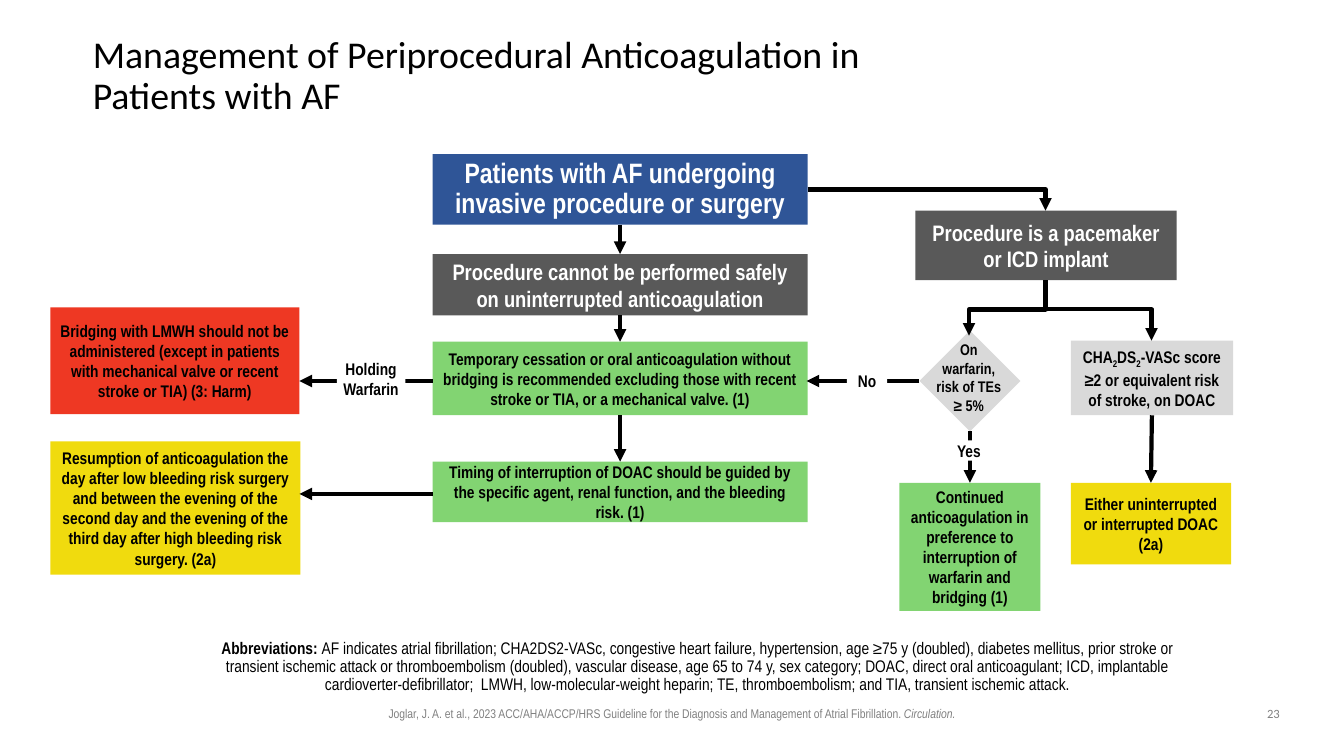
from dataclasses import dataclass

from lxml import etree
from pptx import Presentation
from pptx.dml.color import RGBColor
from pptx.enum import shapes, text
from pptx.oxml import ns
from pptx.util import Inches, Pt


@dataclass(frozen=True)
class Theme:
    black: str = "000000"
    white: str = "FFFFFF"
    blue: str = "2F5597"
    charcoal: str = "595959"
    green: str = "82D472"
    yellow: str = "F0DB0E"
    red: str = "EE3823"
    silver: str = "D9D9D9"
    muted: str = "808080"
    heading_font: str = "Calibri"
    body_font: str = "Arial Narrow"
    title: int = 27
    start: int = 20
    branch: int = 16
    body: int = 12
    diamond: int = 11
    footer: int = 9
    line: int = 3


THEME = Theme()
TITLE = "Management of Periprocedural Anticoagulation in Patients with AF"
ABBREVIATIONS = (
    "Abbreviations: ",
    "AF indicates atrial fibrillation; CHA2DS2-VASc, congestive heart failure, hypertension, "
    "age ≥75 y (doubled), diabetes mellitus, prior stroke or transient ischemic attack or "
    "thromboembolism (doubled), vascular disease, age 65 to 74 y, sex category; DOAC, direct "
    "oral anticoagulant; ICD, implantable cardioverter-defibrillator;  LMWH, low-molecular-weight "
    "heparin; TE, thromboembolism; and TIA, transient ischemic attack.",
)
CITATION = (
    "Joglar, J. A. et al., 2023 ACC/AHA/ACCP/HRS Guideline for the Diagnosis and Management "
    "of Atrial Fibrillation. ",
    "Circulation.",
)
PAGE = "23"

CENTER_LEFT, CENTER_WIDTH = 4.29, 3.72
BOXES = {
    "start": ((CENTER_LEFT, 1.53, CENTER_WIDTH, 0.7), THEME.blue, THEME.white, THEME.start,
              ["Patients with AF undergoing", "invasive procedure or surgery"]),
    "unsafe": ((CENTER_LEFT, 2.52, CENTER_WIDTH, 0.61), THEME.charcoal, THEME.white, THEME.branch,
               ["Procedure cannot be performed safely on uninterrupted anticoagulation"]),
    "implant": ((9.08, 2.09, 2.59, 0.69), THEME.charcoal, THEME.white, THEME.branch,
                ["Procedure is a pacemaker or ICD implant"]),
    "cessation": ((CENTER_LEFT, 3.39, CENTER_WIDTH, 0.73), THEME.green, THEME.black, THEME.body,
                  ["Temporary cessation or oral anticoagulation without bridging is recommended "
                   "excluding those with recent stroke or TIA, or a mechanical valve. (1)"]),
    "timing": ((CENTER_LEFT, 4.58, CENTER_WIDTH, 0.6), THEME.green, THEME.black, THEME.body,
               ["Timing of interruption of DOAC should be guided by the specific agent, "
                "renal function, and the bleeding risk. (1)"]),
    "resumption": ((0.5, 4.38, 2.48, 1.32), THEME.yellow, THEME.black, THEME.body,
                   ["Resumption of anticoagulation the day after low bleeding risk surgery and "
                    "between the evening of the second day and the evening of the third day "
                    "after high bleeding risk surgery. (2a)"]),
    "bridging": ((0.5, 3.05, 2.47, 1.06), THEME.red, THEME.black, THEME.body,
                 ["Bridging with LMWH should not be administered (except in patients with "
                  "mechanical valve or recent stroke or TIA) (3: Harm)"]),
    "continued": ((8.92, 4.79, 1.4, 1.27), THEME.green, THEME.black, THEME.body,
                  ["Continued anticoagulation in preference to interruption of warfarin "
                   "and bridging (1)"]),
    "either": ((10.62, 4.79, 1.59, 0.81), THEME.yellow, THEME.black, THEME.body,
               ["Either uninterrupted or interrupted DOAC (2a)"]),
    "score": ((10.62, 3.38, 1.61, 0.74), THEME.silver, THEME.black, THEME.body,
              ["CHA~2~DS~2~-VASc score", "≥2 or equivalent risk", "of stroke, on DOAC"]),
}
DIAMOND = (9.12, 3.28, 1, 1)
DIAMOND_TEXT = ((9.08, 3.33, 1.06, 0.84), ["On", "warfarin,", "risk of TEs", "≥ 5%"])
DOWN_ARROWS = [("start", "unsafe"), ("unsafe", "cessation"), ("cessation", "timing"),
               ("warfarin", "continued"), ("score", "either")]
LEFT_ARROWS = [((9.12, 3.78), (8, 3.78), "warfarin"), ((4.29, 3.78), (2.97, 3.78), None),
               ((4.29, 4.9), (2.97, 4.9), None)]
FORK, FORK_Y = (10.37, 2.78), 3.07
FORK_ENDS = [(9.61, 3.33), (11.42, 3.38)]
LABELS = [((8.4, 3.63, 0.4, 0.3), 0.05, ["No"]),
          ((3.34, 3.51, 0.68, 0.5), 0.05, ["Holding", "Warfarin"]),
          ((9.41, 4.37, 0.4, 0.2), 0, ["Yes"])]


def style(paragraph, size, color, bold=None, font=THEME.body_font, align=text.PP_ALIGN.CENTER):
    paragraph.alignment = align
    paragraph.font.name = font
    paragraph.font.size = Pt(size)
    paragraph.font.bold = bold
    paragraph.font.color.rgb = RGBColor.from_string(color)


def set_margins(frame, left, top, right, bottom):
    frame.margin_left, frame.margin_top = Inches(left), Inches(top)
    frame.margin_right, frame.margin_bottom = Inches(right), Inches(bottom)


def place(shape, at):
    shape.left, shape.top, shape.width, shape.height = map(Inches, at)


def write(frame, lines, size, color):
    frame.word_wrap = True
    for index, line in enumerate(lines):
        paragraph = frame.paragraphs[0] if index == 0 else frame.add_paragraph()
        for position, part in enumerate(line.split("~")):
            run = paragraph.add_run()
            run.text = part
            if position % 2:
                run.font._element.set("baseline", "-25000")
        style(paragraph, size, color, True)


def add_block(slide, at, fill, preset=shapes.MSO_SHAPE.RECTANGLE):
    shape = slide.shapes.add_shape(preset, *map(Inches, at))
    shape.shadow.inherit = False
    shape.fill.solid()
    shape.fill.fore_color.rgb = RGBColor.from_string(fill)
    shape.line.fill.background()
    shape.text_frame.vertical_anchor = text.MSO_ANCHOR.MIDDLE
    return shape


def add_text_box(slide, at):
    frame = slide.shapes.add_textbox(*map(Inches, at)).text_frame
    frame.word_wrap = True
    return frame


def add_arrow(slide, start, end, kind=shapes.MSO_CONNECTOR.STRAIGHT):
    connector = slide.shapes.add_connector(kind, *map(Inches, start + end))
    connector.line.color.rgb = RGBColor.from_string(THEME.black)
    connector.line.width = Pt(THEME.line)
    etree.SubElement(connector.line._get_or_add_ln(), ns.qn("a:tailEnd"), type="triangle")
    etree.SubElement(connector._element.spPr, ns.qn("a:effectLst"))
    return connector


def add_fork_arrow(slide, start, end, bend_y):
    run, rise = abs(end[0] - start[0]), end[1] - start[1]
    middle_x, middle_y = (start[0] + end[0]) / 2, (start[1] + end[1]) / 2
    corner = (middle_x - rise / 2, middle_y - run / 2)
    connector = add_arrow(slide, corner, (corner[0] + rise, corner[1] + run),
                          shapes.MSO_CONNECTOR.ELBOW)
    transform = connector._element.spPr.find(ns.qn("a:xfrm"))
    to_right = end[0] > start[0]
    transform.set("rot", str((270 if to_right else 90) * 60000))
    if to_right:
        transform.set("flipH", "1")
    adjustments = connector._element.spPr.find(ns.qn("a:prstGeom")).get_or_add_avLst()
    share = round((bend_y - start[1]) / rise * 100000)
    etree.SubElement(adjustments, ns.qn("a:gd"), name="adj1", fmla=f"val {share}")


def add_placeholders(slide):
    title, body = slide.placeholders[0], slide.placeholders[1]
    place(title, (0.92, 0.4, 8.38, 0.72))
    title.text_frame.text = TITLE
    title.text_frame.vertical_anchor = text.MSO_ANCHOR.MIDDLE
    set_margins(title.text_frame, 0, 0, 0, 0)
    paragraph = title.text_frame.paragraphs[0]
    paragraph.line_spacing = 0.9
    style(paragraph, THEME.title, THEME.black, font=THEME.heading_font, align=text.PP_ALIGN.LEFT)

    place(body, (2, 6.3, 9.94, 0.54))
    set_margins(body.text_frame, 0, 0.05, 0.1, 0.05)
    paragraph = body.text_frame.paragraphs[0]
    properties = paragraph._p.get_or_add_pPr()
    properties.set("marL", "0")
    properties.set("indent", "0")
    etree.SubElement(properties, ns.qn("a:buNone"))
    paragraph.line_spacing = 0.9
    paragraph.space_before = Pt(0)
    for part in ABBREVIATIONS:
        paragraph.add_run().text = part
    paragraph.runs[0].font.bold = True
    style(paragraph, THEME.body, THEME.black)
    for placeholder in (title, body):
        placeholder.text_frame.auto_size = text.MSO_AUTO_SIZE.NONE


def add_flow(slide):
    nodes = {}
    for name, (at, fill, color, size, lines) in BOXES.items():
        nodes[name] = add_block(slide, at, fill)
        write(nodes[name].text_frame, lines, size, color)
    set_margins(nodes["start"].text_frame, 0, 0, 0, 0)
    for paragraph in nodes["start"].text_frame.paragraphs:
        paragraph.line_spacing = 0.9
    nodes["warfarin"] = add_block(slide, DIAMOND, THEME.silver, shapes.MSO_SHAPE.DIAMOND)
    at, lines = DIAMOND_TEXT
    write(add_text_box(slide, at), lines, THEME.diamond, THEME.black)

    for upper, lower in DOWN_ARROWS:
        connector = add_arrow(slide, (0, 0), (1, 1))
        connector.begin_connect(nodes[upper], 2)
        connector.end_connect(nodes[lower], 0)
    for start, end, source in LEFT_ARROWS:
        connector = add_arrow(slide, start, end)
        if source:
            connector.begin_connect(nodes[source], 1)
    corner = add_arrow(slide, (8.01, 1.88), (10.37, 2.09), shapes.MSO_CONNECTOR.ELBOW)
    corner._element.spPr.find(ns.qn("a:prstGeom")).set("prst", "bentConnector2")
    for end in FORK_ENDS:
        add_fork_arrow(slide, FORK, end, FORK_Y)
    for at, inset, lines in LABELS:
        label = add_block(slide, at, THEME.white).text_frame
        label.vertical_anchor = text.MSO_ANCHOR.TOP
        set_margins(label, 0, inset, 0, inset)
        write(label, lines, THEME.body, THEME.black)


def add_footer(slide):
    citation = add_text_box(slide, (2.94, 6.95, 7.45, 0.25)).paragraphs[0]
    for part in CITATION:
        citation.add_run().text = part
    citation.runs[1].font.italic = True
    style(citation, THEME.footer, THEME.muted)
    page = add_text_box(slide, (12.42, 6.95, 0.42, 0.26)).paragraphs[0]
    page.text = PAGE
    style(page, THEME.footer, THEME.muted, font=THEME.heading_font)


def main():
    presentation = Presentation()
    presentation.slide_width, presentation.slide_height = Inches(13.33), Inches(7.5)
    slide = presentation.slides.add_slide(presentation.slide_layouts[1])
    add_placeholders(slide)
    add_flow(slide)
    add_footer(slide)
    presentation.save("out.pptx")


if __name__ == "__main__":
    main()
